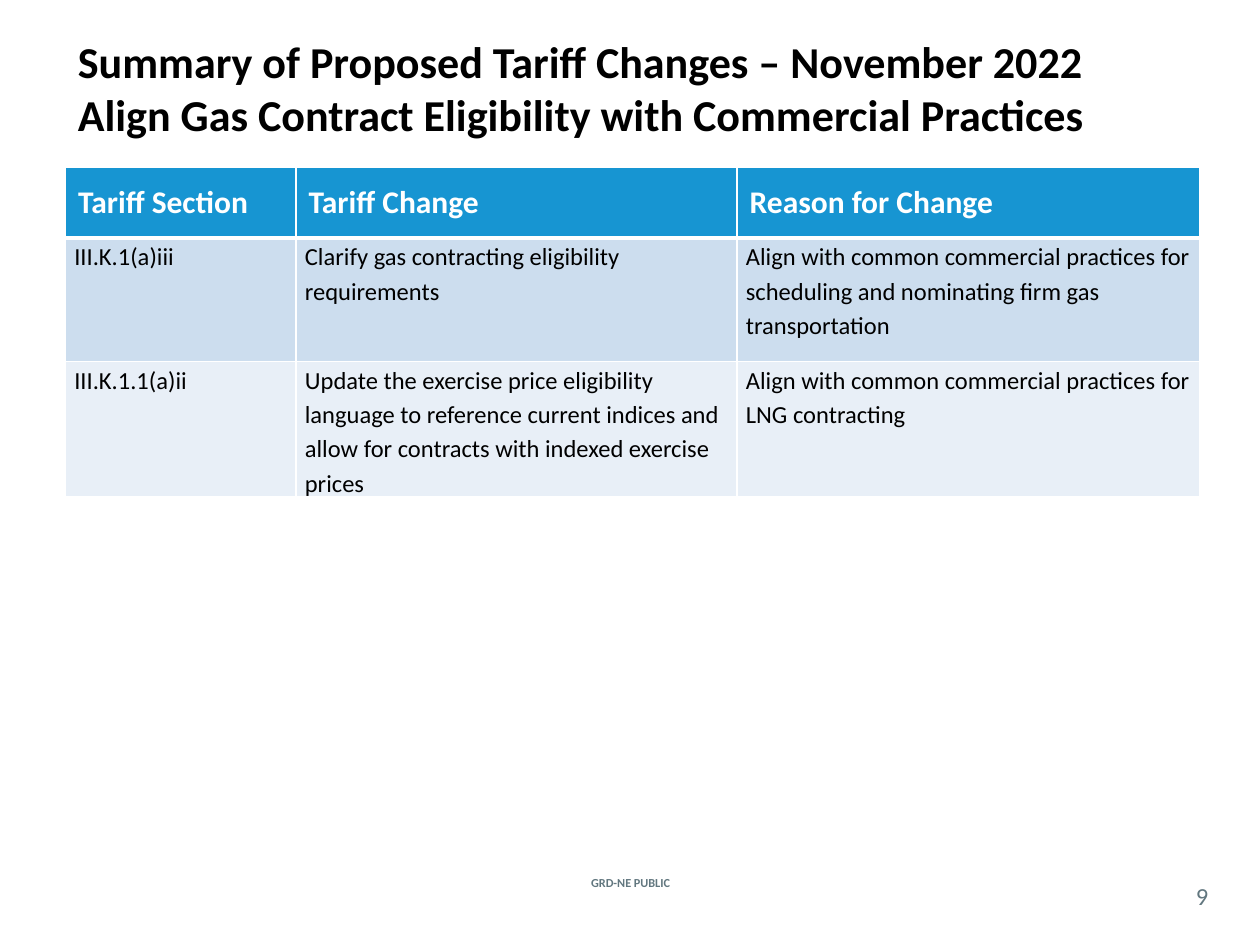
from lxml import etree
from pptx import Presentation
from pptx.dml.color import RGBColor
from pptx.enum import text as t
from pptx.oxml import ns
from pptx.util import Inches, Pt

FONT = "Calibri"
COLORS = {
    "black": "000000",
    "white": "FFFFFF",
    "grey": "62777F",
    "header": "1795D2",
    "odd_row": "CCDDEE",
    "even_row": "E8EFF7",
}
TITLE = [
    "Summary of Proposed Tariff Changes – November 2022",
    "Align Gas Contract Eligibility with Commercial Practices",
]
COLUMN_WIDTHS = [1.83, 3.5, 3.67]
ROW_HEIGHTS = [0.56, 0.98, 1.07]
TARIFF_ROWS = [
    ["Tariff Section", "Tariff Change", "Reason for Change"],
    [
        "III.K.1(a)iii",
        "Clarify gas contracting eligibility requirements",
        "Align with common commercial practices for scheduling and "
        "nominating firm gas transportation",
    ],
    [
        "III.K.1.1(a)ii",
        "Update the exercise price eligibility language to reference current "
        "indices and allow for contracts with indexed exercise prices",
        "Align with common commercial practices for LNG contracting",
    ],
]


def color(name):
    return RGBColor.from_string(COLORS[name])


def style_text(frame, size, color_name, bold=False, align=t.PP_ALIGN.LEFT, spacing=None):
    for para in frame.paragraphs:
        para.alignment = align
        if spacing:
            para.line_spacing = spacing
        for span in para.runs:
            span.font.name = FONT
            span.font.size = Pt(size)
            span.font.bold = bold
            span.font.color.rgb = color(color_name)


def set_margins(target, side, top):
    target.margin_left = target.margin_right = Inches(side)
    target.margin_top = target.margin_bottom = Inches(top)


def add_text(page, position, lines, anchor, margins, **style):
    box = page.shapes.add_textbox(*map(Inches, position))
    frame = box.text_frame
    frame.word_wrap = True
    frame.vertical_anchor = anchor
    set_margins(frame, *margins)
    frame.text = "\n".join(lines)
    style_text(frame, **style)


def add_borders(cell, widths):
    properties = cell._tc.get_or_add_tcPr()
    for side, width in widths.items():
        line = etree.SubElement(properties, ns.qn(f"a:ln{side}"), w=str(Pt(width)))
        fill = etree.SubElement(line, ns.qn("a:solidFill"))
        etree.SubElement(fill, ns.qn("a:srgbClr"), val=COLORS["white"])


def style_cell(cell, row):
    header = row == 0
    # A thick rule separates the header from the body
    add_borders(cell, {"L": 1, "R": 1, "T": 3 if row == 1 else 1, "B": 3 if header else 1})
    cell.fill.solid()
    cell.fill.fore_color.rgb = color(["header", "odd_row", "even_row"][row])
    if header:
        cell.vertical_anchor = t.MSO_ANCHOR.MIDDLE
        set_margins(cell, 0.1, 0.05)
        style_text(cell.text_frame, 18, "white", bold=True)
    else:
        cell.vertical_anchor = t.MSO_ANCHOR.TOP
        set_margins(cell, 0.07, 0)
        style_text(cell.text_frame, 14, "black", spacing=1.15)


def add_tariff_table(page):
    frame = page.shapes.add_table(
        len(TARIFF_ROWS), len(COLUMN_WIDTHS),
        Inches(0.52), Inches(1.33), Inches(sum(COLUMN_WIDTHS)), Inches(sum(ROW_HEIGHTS)),
    )
    table = frame.table
    for column, width in zip(table.columns, COLUMN_WIDTHS):
        column.width = Inches(width)
    for index, (row, height) in enumerate(zip(table.rows, ROW_HEIGHTS)):
        row.height = Inches(height)
        for cell, words in zip(row.cells, TARIFF_ROWS[index]):
            cell.text = words
            style_cell(cell, index)


def main():
    deck = Presentation()
    deck.slide_width, deck.slide_height = Inches(10), Inches(7.5)
    page = deck.slides.add_slide(deck.slide_layouts[6])
    middle, center = t.MSO_ANCHOR.MIDDLE, t.PP_ALIGN.CENTER

    # Footer
    add_text(page, (4.27, 6.92, 1.47, 0.17), ["GRD-NE PUBLIC"], middle, (0.1, 0),
             size=7, color_name="grey", bold=True, align=center)
    add_text(page, (9.33, 6.96, 0.42, 0.29), ["9"], middle, (0, 0),
             size=14, color_name="grey", align=center)

    # Title
    add_text(page, (0.52, 0.25, 9, 1.25), TITLE, t.MSO_ANCHOR.TOP, (0.1, 0.02),
             size=25.2, color_name="black", bold=True)

    # Tariff changes
    add_tariff_table(page)
    deck.save("out.pptx")


if __name__ == "__main__":
    main()
